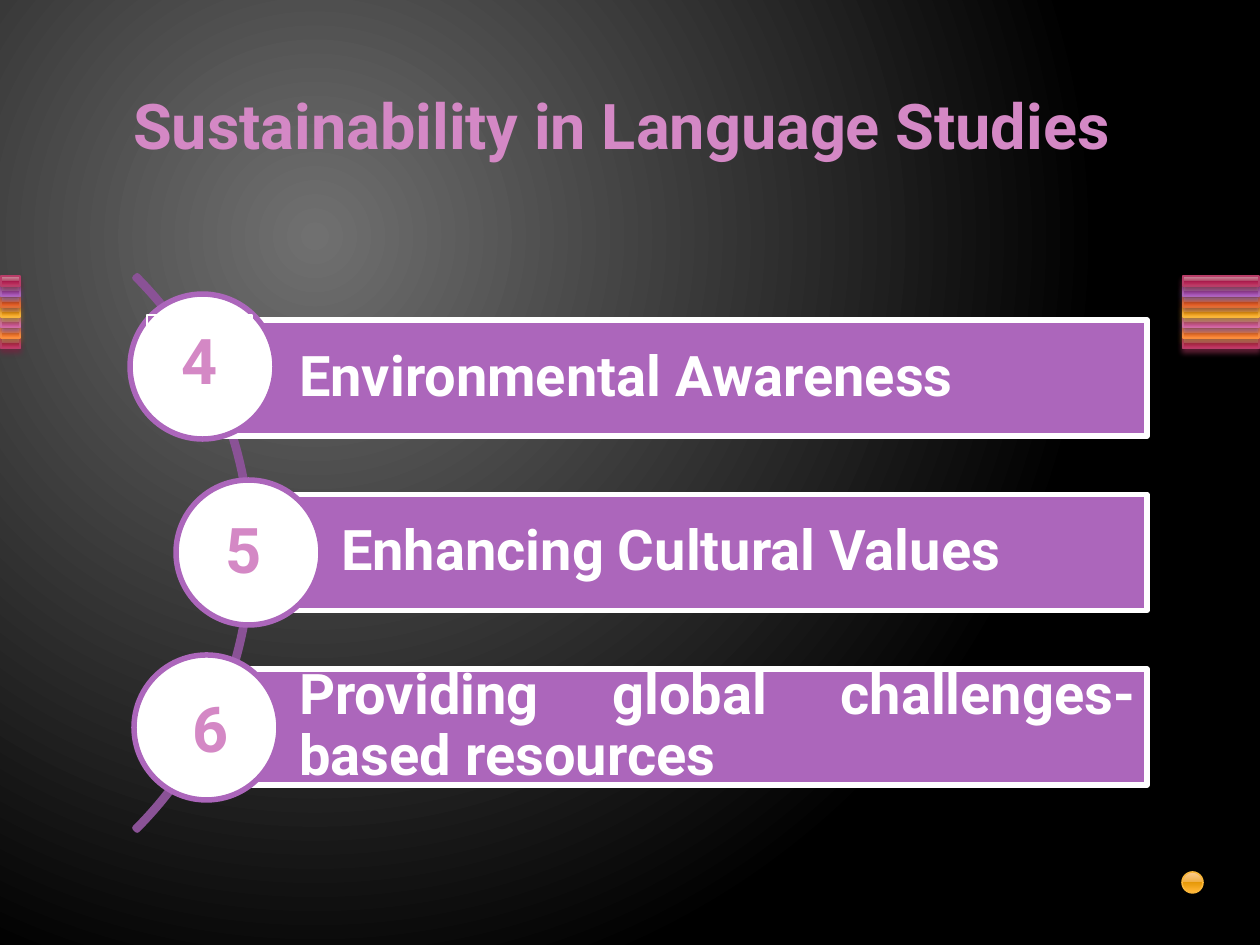
import pptx
import pptx.dml.color
import pptx.enum.shapes
import pptx.enum.text
import pptx.oxml.ns
import pptx.oxml.xmlchemy
import pptx.util
from lxml import etree

RGBColor = pptx.dml.color.RGBColor
SHAPE = pptx.enum.shapes.MSO_SHAPE
ALIGN = pptx.enum.text.PP_ALIGN
ANCHOR = pptx.enum.text.MSO_ANCHOR
qn = pptx.oxml.ns.qn

PX = 914400 / 126
FONT = "Roboto"
WHITE = RGBColor(0xFF, 0xFF, 0xFF)
PINK = RGBColor(0xD4, 0x88, 0xC5)
PURPLE = RGBColor(0xAC, 0x66, 0xBB)
DARK_PURPLE = RGBColor(0x8A, 0x52, 0x96)

TITLE = "Sustainability in Language Studies "
# text, alignment, bar left, circle left and top, number, number box
TOPICS = [
    ("Environmental Awareness", ALIGN.LEFT, 207, (130, 294), "4", (147, 315, 105, 89)),
    ("Enhancing Cultural Values", ALIGN.LEFT, 249, (176, 480), "5", (199, 504, 89, 89)),
    ("Providing global challenges-based resources", ALIGN.JUSTIFY, 207, (134, 655),
     "6", (166, 683, 89, 89)),
]
BAR_TOP, BAR_STEP, BAR_RIGHT, BAR_HEIGHT = 320, 174.5, 1147, 116
CIRCLE = 145

# gloss gradient colours, line, shadow
RASPBERRY = (("CE94A2", "B34869", "A61749", "C13764", "CA5D7C"), "B83D68", "722640")
VIOLET = (("C6A2D0", "A666B4", "8F3EA1", "AD5DBF", "BA76CA"), "AC66BB", "6A3F73")
RUST = (("E7A493", "D66B42", "CC4809", "E9642C", "F07B55"), "DE6C36", "894321")
AMBER = (("FBCC93", "EFAE43", "E59807", "FFB432", "FFBE5F"), "F9B639", "9A7023")
ROSE = (("DDA4C1", "C66B9D", "B34181", "D361A0", "DC79AE"), "CF6DA4", "804365")
ORANGE = (("FBB494", "F08745", "E5670B", "FF8736", "FF9961"), "FA8D3D", "9A5726")
STRIPES = [RASPBERRY, VIOLET, RUST, AMBER, ROSE, ORANGE, RASPBERRY]
STRIPE_COLUMNS = [(1, 19), (1183, 76)]  # left, width
STRIPE_TOP, STRIPE_STEP, STRIPE_HEIGHT = 276, 10.4, 10
GLOSS_POSITIONS = (0, 49, 49, 92, 100)


def px(value):
    return pptx.util.Emu(round(value * PX))


def add_child(parent, tag, **attributes):
    child = etree.SubElement(parent, qn(tag))
    for name, value in attributes.items():
        child.set(name, str(value))
    return child


def set_gradient(owner, fill, positions, colors):
    """Fill with the given stops and return the element that takes the direction."""
    fill.gradient()
    gradient = owner.find(".//" + qn("a:gradFill"))
    for child in list(gradient):
        gradient.remove(child)
    stops = add_child(gradient, "a:gsLst")
    for position, color in zip(positions, colors):
        stop = add_child(stops, "a:gs", pos=position * 1000)
        add_child(stop, "a:srgbClr", val=color)
    return gradient


def add_shape(slide, kind, box, fill=None, line=None, width=3.15):
    shape = slide.shapes.add_shape(kind, *map(px, box))
    shape.shadow.inherit = False
    if fill is None:
        shape.fill.background()
    else:
        shape.fill.solid()
        shape.fill.fore_color.rgb = fill
    shape.line.color.rgb = line
    shape.line.width = pptx.util.Pt(width)
    return shape


def add_glossy(slide, kind, box, style, shadowed=True):
    colors, line, shadow = style
    shape = add_shape(slide, kind, box, line=RGBColor.from_string(line), width=0.9)
    gradient = set_gradient(shape.element, shape.fill, GLOSS_POSITIONS, colors)
    add_child(gradient, "a:lin", ang=5400000, scaled=0)
    if shadowed:
        effects = shape.element.spPr.find(qn("a:effectLst"))
        outer = add_child(effects, "a:outerShdw", blurRad=39370, dist=25400,
                          dir=5400000, rotWithShape=0)
        color = add_child(outer, "a:srgbClr", val=shadow)
        add_child(color, "a:alpha", val=83000)


def write(shape, text, size=36, color=PINK, align=ALIGN.CENTER, anchor=ANCHOR.TOP,
          left_inset=None, line_spacing=None):
    frame = shape.text_frame
    frame.word_wrap = True
    frame.vertical_anchor = anchor
    if left_inset is not None:
        frame.margin_left = px(left_inset)
        frame.margin_right = frame.margin_top = frame.margin_bottom = px(11)
    paragraph = frame.paragraphs[0]
    paragraph.alignment = align
    paragraph.line_spacing = line_spacing
    run = paragraph.add_run()
    run.text = text
    run.font.name = FONT
    run.font.size = pptx.util.Pt(size)
    run.font.bold = True
    run.font.color.rgb = color


def add_background(slide):
    gradient = set_gradient(slide.element, slide.background.fill, (0, 100),
                            ("707070", "000000"))
    path = add_child(gradient, "a:path", path="circle")
    add_child(path, "a:fillToRect", l=50000, t=50000, r=100000, b=100000)


def add_decoration(slide):
    for left, width in STRIPE_COLUMNS:
        for row, style in reversed(list(enumerate(STRIPES))):
            top = STRIPE_TOP + row * STRIPE_STEP
            add_glossy(slide, SHAPE.RECTANGLE, (left, top, width, STRIPE_HEIGHT), style)
    add_glossy(slide, SHAPE.OVAL, (1182, 872, 21, 21), AMBER, shadowed=False)


def add_topics(slide):
    arc = add_shape(slide, SHAPE.BLOCK_ARC, (-532, 161, 784, 784), line=DARK_PURPLE)
    for index, value in enumerate((189, 27, 0.004)):
        arc.adjustments[index] = value
    for row, (text, align, left, circle, _, _) in enumerate(TOPICS):
        box = (left, BAR_TOP + row * BAR_STEP, BAR_RIGHT - left, BAR_HEIGHT)
        bar = add_shape(slide, SHAPE.RECTANGLE, box, fill=PURPLE, line=WHITE)
        write(bar, text, size=32, color=WHITE, align=align, anchor=ANCHOR.MIDDLE,
              left_inset=92, line_spacing=0.9)
        add_shape(slide, SHAPE.OVAL, (*circle, CIRCLE, CIRCLE), fill=WHITE, line=PURPLE)
    for row, (*_, number, box) in enumerate(TOPICS):
        if row == 0:
            label = add_shape(slide, SHAPE.RECTANGLE, box, line=WHITE, width=0.75)
        else:
            label = slide.shapes.add_textbox(*map(px, box))
        write(label, number)


def main():
    presentation = pptx.Presentation()
    presentation.slide_width = px(1260)
    presentation.slide_height = px(945)
    slide = presentation.slides.add_slide(presentation.slide_layouts[6])
    add_background(slide)
    add_decoration(slide)
    title = slide.shapes.add_textbox(*map(px, (73, 62, 1113, 106)))
    write(title, TITLE, anchor=ANCHOR.BOTTOM)
    add_topics(slide)
    presentation.save("out.pptx")


if __name__ == "__main__":
    main()
